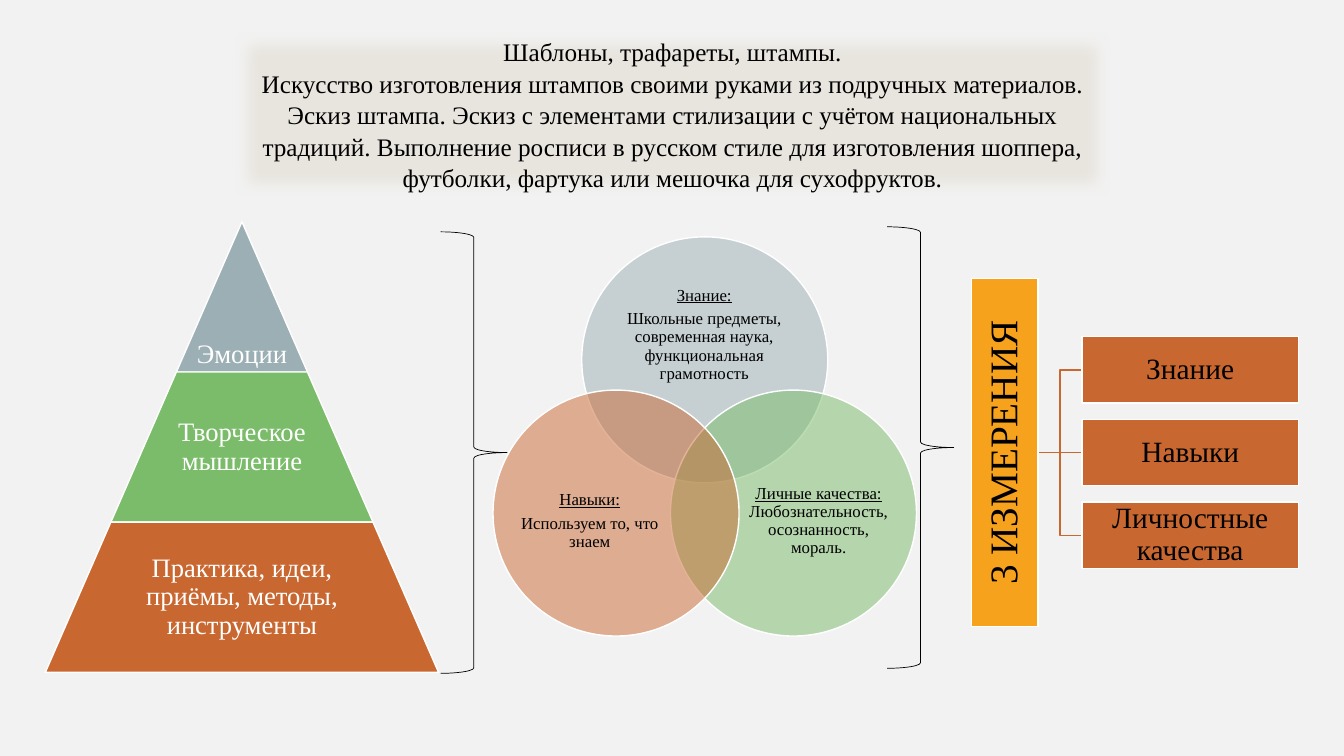
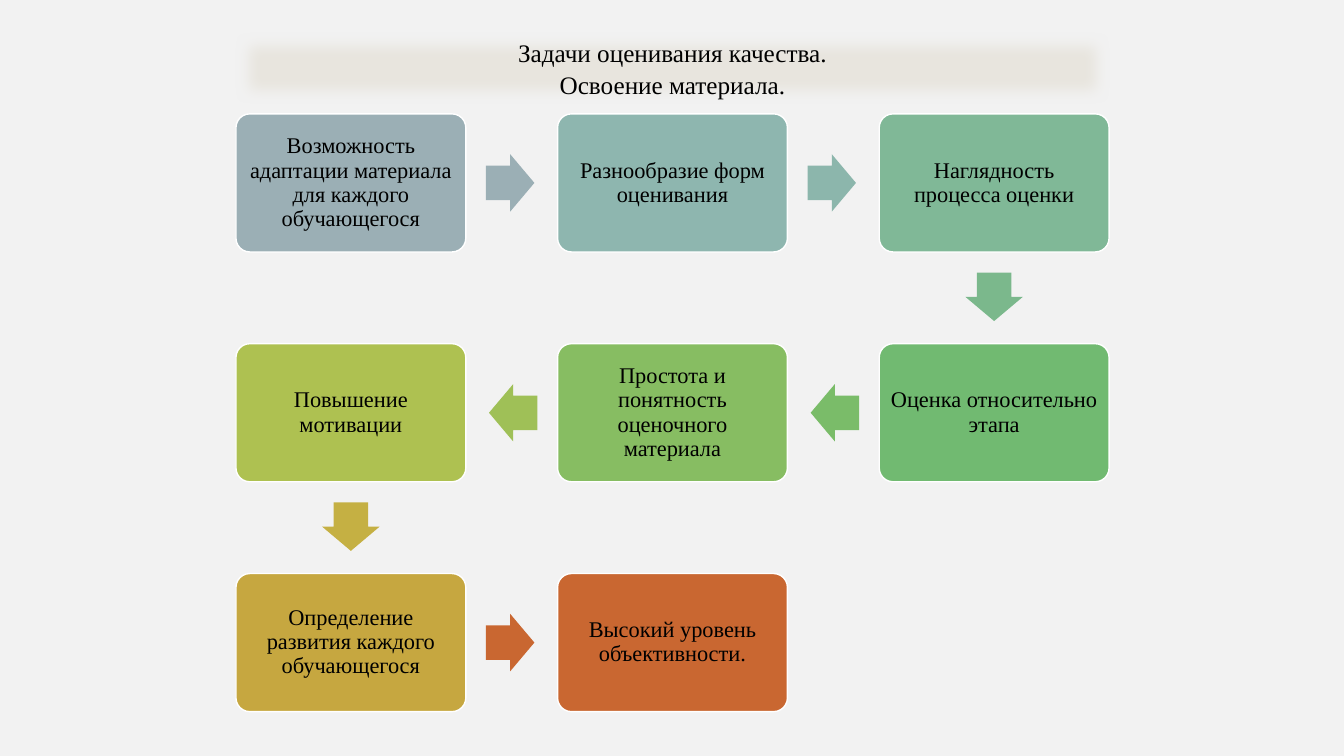
import itertools
import math

import pptx
import pptx.dml.color
import pptx.enum.shapes
import pptx.enum.text
import pptx.oxml
import pptx.oxml.ns
import pptx.util

PX = 9144  # EMU in one px, 100 px to the inch
SHAPE = pptx.enum.shapes.MSO_SHAPE
LINK = pptx.enum.shapes.MSO_CONNECTOR
ANCHOR = pptx.enum.text.MSO_ANCHOR
qn = pptx.oxml.ns.qn

BLACK, WHITE, PAPER, BAND = "000000", "FFFFFF", "F2F2F2", "E8E5DE"
STEEL, GREEN, RUST, AMBER = "9BAFB5", "7ABC69", "C96731", "F6A21D"


def px(length):
    return pptx.util.Emu(round(length * PX))


def rgb(value):
    return pptx.dml.color.RGBColor.from_string(value)


def paint(fill, color):
    fill.solid()
    fill.fore_color.rgb = rgb(color)


def write(frame, paragraphs, size=16, color=BLACK, spacing=0.9, inset=(0, 0),
          anchor=ANCHOR.MIDDLE, heading=False, gap=4):
    """Fill a text frame; heading underlines the first paragraph, gap follows it."""
    frame.word_wrap = True
    frame.auto_size = pptx.enum.text.MSO_AUTO_SIZE.NONE
    frame.vertical_anchor = anchor
    frame.margin_left = frame.margin_right = px(inset[0])
    frame.margin_top = frame.margin_bottom = px(inset[1])
    for index, text in enumerate(paragraphs):
        para = frame.add_paragraph() if index else frame.paragraphs[0]
        para.alignment = pptx.enum.text.PP_ALIGN.CENTER
        para.line_spacing = spacing
        para.space_before = pptx.util.Pt(0)
        para.space_after = pptx.util.Pt(gap if heading and index == 0 else 0)
        span = para.add_run()
        span.text = text
        span.font.name = "Times New Roman"
        span.font.size = pptx.util.Pt(size)
        span.font.color.rgb = rgb(color)
        span.font.underline = heading and index == 0


class Board:
    """The deck's style and the slide being filled."""

    def __init__(self):
        self.deck = pptx.Presentation()
        self.deck.slide_width, self.deck.slide_height = px(1333), px(750)
        paint(self.deck.slide_master.background.fill, PAPER)
        self.page = None

    def start_page(self, title, height):
        layout = self.deck.slide_layouts.get_by_name("Title Only")
        self.page = self.deck.slides.add_slide(layout)
        band = self.page.shapes.title
        band.left, band.top, band.width, band.height = map(px, (234, 32, 866, height))
        paint(band.fill, BAND)
        band.shadow.inherit = False
        effects = band.element.spPr.find(qn("a:effectLst"))
        soft = pptx.oxml.parse_xml(
            '<a:softEdge xmlns:a="http://schemas.openxmlformats.org/'
            'drawingml/2006/main" rad="127000"/>')
        effects.append(soft)
        write(band.text_frame, title, size=18, spacing=1.04, inset=(10, 5))

    def shape(self, kind, area, fill=None, line=WHITE, width=1, adjust=(),
              turn=0, alpha=None):
        box = self.page.shapes.add_shape(kind, *map(px, area))
        box.shadow.inherit = False
        box.rotation = turn
        for index, value in enumerate(adjust):
            box.adjustments[index] = value
        if fill:
            paint(box.fill, fill)
        else:
            box.fill.background()
        if alpha:
            shade = box.element.spPr.find(qn("a:solidFill")).find(qn("a:srgbClr"))
            shade.append(pptx.oxml.parse_xml(
                '<a:alpha xmlns:a="http://schemas.openxmlformats.org/'
                f'drawingml/2006/main" val="{alpha * 1000}"/>'))
        if line:
            paint(box.line.fill, line)
            box.line.width = pptx.util.Pt(width)
        else:
            box.line.fill.background()
        return box

    def label(self, area, paragraphs, **style):
        box = self.page.shapes.add_textbox(*map(px, area))
        write(box.text_frame, paragraphs, **style)

    def panel(self, kind, area, text, fill, size, inset, **look):
        """A filled shape that carries its own text."""
        box = self.shape(kind, area, fill, **look)
        write(box.text_frame, [text], size=size, inset=(inset, inset))

    def connector(self, start, end):
        kind = LINK.STRAIGHT if start[1] == end[1] else LINK.ELBOW
        link = self.page.shapes.add_connector(kind, *map(px, start + end))
        paint(link.line.fill, RUST)
        link.line.width = pptx.util.Pt(1)
        pptx.oxml.xmlchemy.OxmlElement("a:effectLst")
        link.element.spPr.append(pptx.oxml.xmlchemy.OxmlElement("a:effectLst"))

    def brace(self, left, top):
        self.shape(SHAPE.RIGHT_BRACE, (left, top, 66, 438), line=BLACK, width=0.5)


def draw_pyramid(board):
    slope, height = 65, 149
    tiers = [
        ("Эмоции", STEEL, 130, ANCHOR.BOTTOM),
        ("Творческое мышление", GREEN, 169, ANCHOR.MIDDLE),
        ("Практика, идеи, приёмы, методы, инструменты", RUST, 254, ANCHOR.MIDDLE),
    ]
    for level, (text, fill, text_width, anchor) in enumerate(tiers):
        width, top = 2 * slope * (level + 1), 220 + height * level
        board.shape(SHAPE.TRAPEZOID, (240 - width / 2, top, width, height), fill,
                    adjust=[slope / min(width, height)])
        board.label((240 - text_width / 2, top, text_width, height), [text],
                    size=19, color=WHITE, inset=(3, 3), anchor=anchor)


def draw_circles(board):
    circles = [
        ((577, 235), STEEL, (609, 277, 179, 110), 4,
         ["Знание:", "Школьные предметы, современная наука, "
          "функциональная грамотность"]),
        ((665, 387), GREEN, (739, 450, 146, 134), 0,
         ["Личные качества:", "Любознательность, осознанность, мораль."]),
        ((489, 387), RUST, (512, 450, 146, 134), 4,
         ["Навыки:", "Используем то, что знаем"]),
    ]
    for corner, fill, text_area, gap, paragraphs in circles:
        board.shape(SHAPE.OVAL, corner + (244, 244), fill, alpha=50)
        board.label(text_area, paragraphs, size=12, heading=True, gap=gap)


def draw_dimensions(board):
    names = ["Знание", "Навыки", "Личностные качества"]
    tops = [334 + 82 * row for row in range(len(names))]
    for top in tops:
        board.connector((1030, 449), (1073, top + 33))
    board.panel(SHAPE.RECTANGLE, (824, 416, 345, 66), "3 ИЗМЕРЕНИЯ", AMBER, 28, 2,
                turn=270)
    for name, top in zip(names, tops):
        board.panel(SHAPE.RECTANGLE, (1073, top, 215, 66), name, RUST, 21, 1)


def draw_steps(board):
    """Boxes along a snake of three columns, an arrow between neighbours."""
    columns, width, height = 3, 228, 137
    steps = [
        ("Возможность адаптации материала для каждого обучающегося", STEEL),
        ("Разнообразие форм оценивания", "8EB6AF"),
        ("Наглядность процесса оценки", "80B897"),
        ("Оценка относительно этапа", "71BA71"),
        ("Простота и понятность оценочного материала", "87BD62"),
        ("Повышение мотивации", "AEC151"),
        ("Определение развития каждого обучающегося", "C6A740"),
        ("Высокий уровень объективности.", RUST),
    ]
    arrows = [STEEL, "8CB6AC", "7BB88C", GREEN, "9FC057", "C5B043", RUST]
    corners = []
    for index, (text, fill) in enumerate(steps):
        row, column = divmod(index, columns)
        if row % 2:
            column = columns - 1 - column
        left, top = 234 + 319 * column, 113 + 228 * row
        corners.append((left, top))
        board.panel(SHAPE.ROUNDED_RECTANGLE, (left, top, width, height), text, fill,
                    16, 7, adjust=[0.1])
    for (start, end), fill in zip(itertools.pairwise(corners), arrows):
        run, drop = end[0] - start[0], end[1] - start[1]
        middle_x = start[0] + (width + run) / 2 - math.copysign(1.5, run) * bool(run)
        middle_y = start[1] + (height + drop) / 2 - bool(drop)
        board.shape(SHAPE.RIGHT_ARROW, (middle_x - 24, middle_y - 28.5, 48, 57), fill,
                    line=None, adjust=[0.6, 0.5],
                    turn=math.degrees(math.atan2(drop, run)))


def main():
    board = Board()
    board.start_page([
        "Шаблоны, трафареты, штампы.",
        "Искусство изготовления штампов своими руками из подручных материалов.",
        "Эскиз штампа. Эскиз с элементами стилизации с учётом национальных традиций. "
        "Выполнение росписи в русском стиле для изготовления шоппера, футболки, "
        "фартука или мешочка для сухофруктов.",
    ], height=162)
    draw_pyramid(board)
    board.brace(437, 230)
    draw_circles(board)
    board.brace(880, 225)
    draw_dimensions(board)

    board.start_page(["Задачи оценивания качества.", "Освоение материала."], height=71)
    draw_steps(board)
    board.deck.save("out.pptx")


if __name__ == "__main__":
    main()
